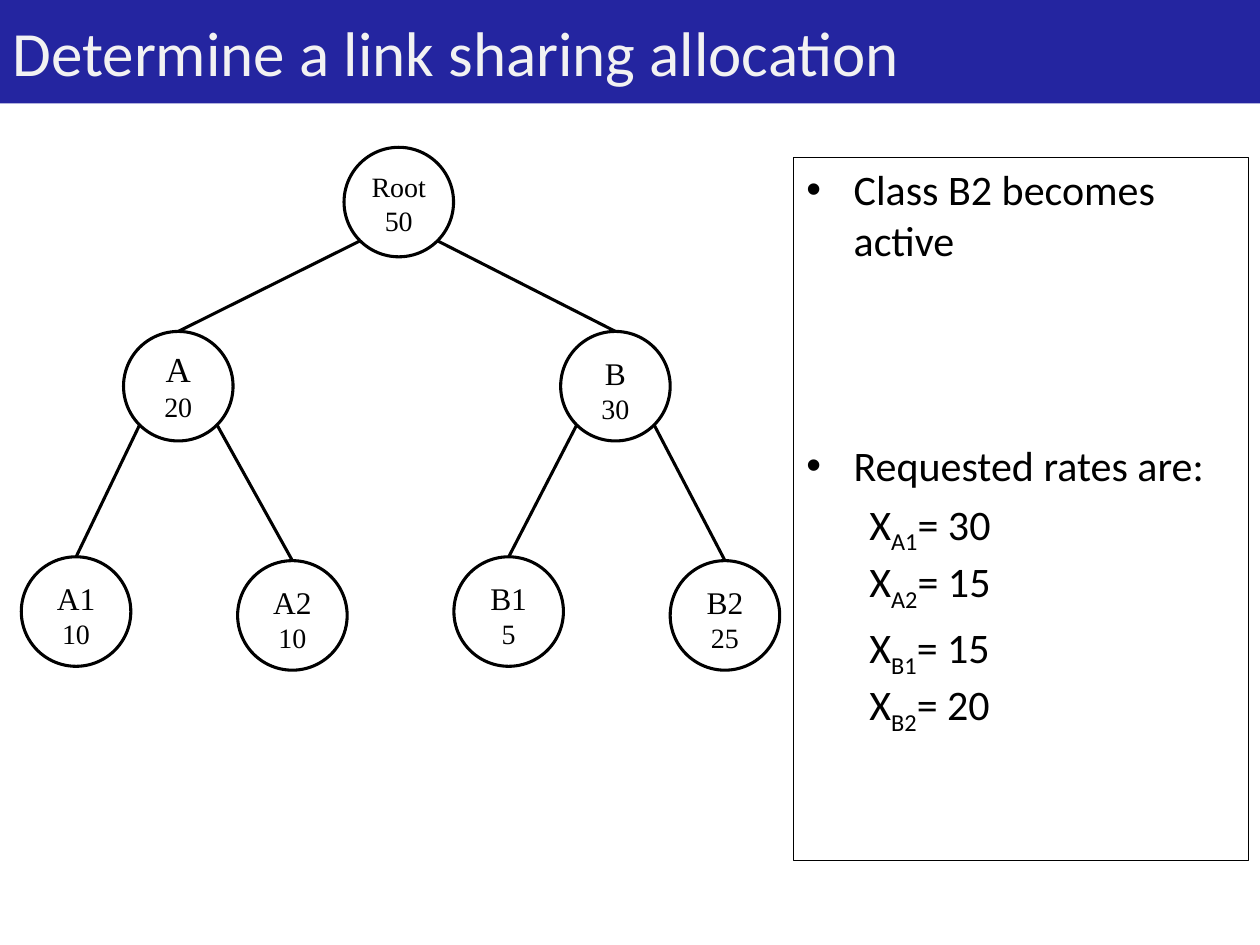
from lxml import etree
from pptx import Presentation
from pptx.dml.color import RGBColor
from pptx.enum.shapes import MSO_CONNECTOR, MSO_SHAPE
from pptx.enum.text import MSO_ANCHOR, MSO_AUTO_SIZE, PP_ALIGN
from pptx.oxml.ns import qn
from pptx.util import Pt

OVAL, STRAIGHT = MSO_SHAPE.OVAL, MSO_CONNECTOR.STRAIGHT
TOP, MIDDLE = MSO_ANCHOR.TOP, MSO_ANCHOR.MIDDLE
LEFT, CENTER = PP_ALIGN.LEFT, PP_ALIGN.CENTER
NO_AUTOFIT = MSO_AUTO_SIZE.NONE

# Content
TITLE = "Determine a link sharing allocation"
BULLETS = [("Class B2 becomes active", 0), ("Requested rates are:", 100)]  # text, space before
RATE_GROUPS = [
    [("A1", "30"), ("A2", "15")],
    [("B1", "15"), ("B2", "20")],
]
LEAF_LEFT, LEAF_STEP, LEAF_TOPS = 12.2, 123.6, (318.2, 320.4)
BRANCH_TOP = 189.4
# name: (share, parent, left, top, name size)
NODES = {
    "Root": ("50", None, 196.6, 84.2, 16),
    "A": ("20", "Root", 70.6, BRANCH_TOP, 20),
    "B": ("30", "Root", 320.4, BRANCH_TOP, 18),
}
LEAVES = [("A1", "10", "A"), ("A2", "10", "A"), ("B1", "5", "B"), ("B2", "25", "B")]
for index, (name, share, parent) in enumerate(LEAVES):
    NODES[name] = (share, parent, LEAF_LEFT + index * LEAF_STEP, LEAF_TOPS[index % 2], 18)

THEME = {
    "banner": RGBColor(0x24, 0x25, 0xA0),
    "title": RGBColor(0xF2, 0xF2, 0xF2),
    "ink": RGBColor(0, 0, 0),
    "font": "Calibri",
    "node_font": "Times New Roman",
    "title_size": 36,
    "body_size": 24,
    "share_size": 16,
    "space": 4.8,
    "frame": 0.75,
    "stroke": 1.75,
}
DIAMETER = 62.6
DIAGONAL = DIAMETER / 2 * 0.5 ** 0.5


def place(shape, left, top, width, height):
    shape.left, shape.top, shape.width, shape.height = map(Pt, (left, top, width, height))


def outline(shape, width):
    shape.line.color.rgb = THEME["ink"]
    shape.line.width = Pt(width)


def style(span, size, font, color=THEME["ink"]):
    span.font.size, span.font.name = Pt(size), font
    span.font.color.rgb = color


def add_span(para, text, size, font):
    span = para.add_run()
    span.text = text
    style(span, size, font)
    return span


def add_break(para, size):
    para.add_line_break()
    line_break = para._p.findall(qn("a:br"))[-1]
    etree.SubElement(line_break, qn("a:rPr")).set("sz", str(size * 100))


def set_indent(para, margin, indent, bullet=None):
    properties = para._p.get_or_add_pPr()
    properties.set("marL", str(Pt(margin)))
    properties.set("indent", str(Pt(indent)))
    if bullet:
        etree.SubElement(properties, qn("a:buChar")).set("char", bullet)
    else:
        etree.SubElement(properties, qn("a:buNone"))


def add_title(slide):
    title = slide.shapes.title
    place(title, 0, -0.7, 720.7, 59.8)
    title.fill.solid()
    title.fill.fore_color.rgb = THEME["banner"]
    frame = title.text_frame
    frame.text = TITLE
    frame.vertical_anchor, frame.auto_size = MIDDLE, NO_AUTOFIT
    para = frame.paragraphs[0]
    para.alignment = LEFT
    style(para.runs[0], THEME["title_size"], THEME["font"], THEME["title"])


def add_body(slide):
    body = slide.placeholders[1]
    place(body, 453.6, 90, 260, 401.8)
    outline(body, THEME["frame"])
    frame = body.text_frame
    frame.auto_size = NO_AUTOFIT
    size, font = THEME["body_size"], THEME["font"]
    frame.text = "\n".join(text for text, _ in BULLETS)
    for para, (_, space) in zip(frame.paragraphs, BULLETS):
        para.space_before = Pt(space)
        set_indent(para, 27, -27, "•")
        style(para.runs[0], size, font)
    for group in RATE_GROUPS:
        para = frame.add_paragraph()
        para.level = 1
        para.space_before = Pt(THEME["space"])
        set_indent(para, 36, 0)
        for index, (name, rate) in enumerate(group):
            if index:
                add_break(para, size)
            add_span(para, "X", size, font)
            subscript = add_span(para, name, size, font)
            subscript.font._element.set("baseline", "-25000")
            add_span(para, f"= {rate}", size, font)


def add_node(slide, name):
    share, _, left, top, size = NODES[name]
    node = slide.shapes.add_shape(OVAL, Pt(left), Pt(top), Pt(DIAMETER), Pt(DIAMETER))
    node.shadow.inherit = False
    node.fill.background()
    outline(node, THEME["stroke"])
    frame = node.text_frame
    frame.word_wrap, frame.vertical_anchor = True, TOP
    frame.margin_left = frame.margin_right = Pt(5.8)
    frame.margin_top = Pt(0 if name == "A" else 3.6)
    frame.margin_bottom = Pt(3.6)
    para = frame.paragraphs[0]
    para.alignment = CENTER
    add_span(para, name, size, THEME["node_font"])
    add_break(para, size)
    add_span(para, share, THEME["share_size"], THEME["node_font"])


def add_link(slide, name):
    _, parent, left, top, _ = NODES[name]
    _, _, parent_left, parent_top, _ = NODES[parent]
    side = 1 if left > parent_left else -1
    start_x = parent_left + DIAMETER / 2 + side * DIAGONAL
    start_y = parent_top + DIAMETER / 2 + DIAGONAL
    link = slide.shapes.add_connector(
        STRAIGHT, Pt(start_x), Pt(start_y), Pt(left + DIAMETER / 2), Pt(top))
    outline(link, THEME["stroke"])
    etree.SubElement(link._element.spPr, qn("a:effectLst"))


def main():
    deck = Presentation()
    deck.slide_width, deck.slide_height = Pt(720), Pt(540)
    slide = deck.slides.add_slide(deck.slide_layouts[1])
    add_title(slide)
    add_body(slide)
    # Class tree
    for name in NODES:
        add_node(slide, name)
    for name, (_, parent, *_) in NODES.items():
        if parent:
            add_link(slide, name)
    deck.save("out.pptx")


if __name__ == "__main__":
    main()
